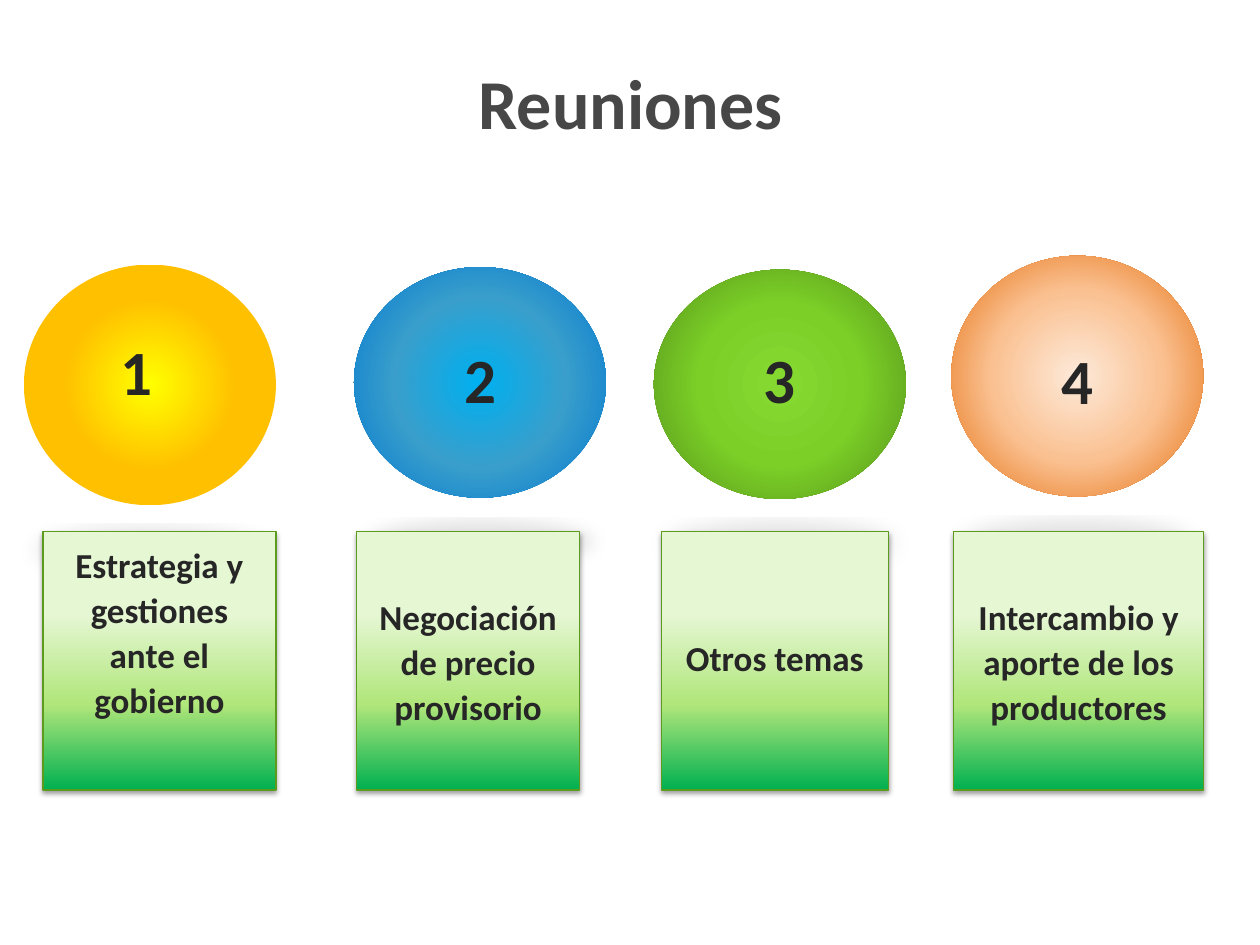
from lxml import etree
from pptx import Presentation
from pptx.dml.color import RGBColor
from pptx.enum.shapes import MSO_SHAPE
from pptx.enum.text import MSO_ANCHOR, PP_ALIGN
from pptx.oxml import parse_xml
from pptx.oxml.ns import nsdecls, qn
from pptx.util import Inches, Pt

OVAL, RECTANGLE = MSO_SHAPE.OVAL, MSO_SHAPE.RECTANGLE
TOP, MIDDLE = MSO_ANCHOR.TOP, MSO_ANCHOR.MIDDLE
LEFT, CENTER = PP_ALIGN.LEFT, PP_ALIGN.CENTER

COLORS = {"title": "474747", "text": "262626", "border": "5C9B1D", "shadow": "000000"}
CARD_STOPS = [(0, "00B050"), (33, "B0E67A"), (68, "E5F7D3")]
UPWARD = '<a:lin ang="16200000" scaled="0"/>'
FROM_CENTER = ('<a:path path="circle"><a:fillToRect l="50000" t="50000" '
               'r="50000" b="50000"/></a:path>')
FLAT_SHADOW = 'sx="90000" sy="-19000" algn="b" rotWithShape="0"'


class MeetingSlide:
    font = "Calibri"

    def __init__(self, deck):
        self.slide = deck.slides.add_slide(deck.slide_layouts[5])
        self.shapes = self.slide.shapes

    def add_text(self, shape, text, size, color, align=CENTER, anchor=TOP):
        frame = shape.text_frame
        frame.word_wrap = True
        frame.vertical_anchor = anchor
        para = frame.paragraphs[0]
        para.alignment = align
        span = para.add_run()
        span.text = text
        span.font.name = self.font
        span.font.size = Pt(size)
        span.font.bold = True
        span.font.color.rgb = RGBColor.from_string(COLORS[color])
        return para, span

    def title(self, text, *place):
        box = self.shapes.title
        box.left, box.top, box.width, box.height = map(Inches, place)
        self.add_text(box, text, 40, "title", anchor=MIDDLE)

    def gradient(self, shape, stops, direction):
        marks = "".join(f'<a:gs pos="{pos * 1000}"><a:srgbClr val="{color}"/></a:gs>'
                        for pos, color in stops)
        fill = parse_xml(f'<a:gradFill {nsdecls("a")} rotWithShape="1">'
                         f'<a:gsLst>{marks}</a:gsLst>{direction}</a:gradFill>')
        shape._element.spPr.find(qn("a:prstGeom")).addnext(fill)

    def shadow(self, shape, opacity, blur, distance, extra='rotWithShape="0"'):
        shape.shadow.inherit = False
        effects = shape._element.spPr.find(qn("a:effectLst"))
        effects.append(etree.fromstring(
            f'<a:outerShdw {nsdecls("a")} blurRad="{Pt(blur)}" dist="{Pt(distance)}" '
            f'dir="5400000" {extra}><a:srgbClr val="{COLORS["shadow"]}">'
            f'<a:alpha val="{opacity * 1000}"/></a:srgbClr></a:outerShdw>'))

    def ball(self, shapes, place, stops, blur):
        oval = shapes.add_shape(OVAL, *map(Inches, place))
        self.gradient(oval, stops, FROM_CENTER)
        oval.line.fill.background()
        self.shadow(oval, 11, blur, 13, FLAT_SHADOW)

    def number(self, shapes, text, left, top, align):
        box = shapes.add_textbox(Inches(left), Inches(top), Inches(0.66), Inches(0.56))
        para, span = self.add_text(box, text, 36, "text", align)
        para.line_spacing = 0.8
        span.font._element.set("spc", "60")

    def card(self, text, left, width, text_offset):
        card = self.shapes.add_shape(RECTANGLE, Inches(left), Inches(4.22),
                                     Inches(width), Inches(2.05))
        self.gradient(card, CARD_STOPS, UPWARD)
        card.line.color.rgb = RGBColor.from_string(COLORS["border"])
        card.line.width = Pt(0.75)
        self.shadow(card, 38, 3.1, 1.6)
        para, _ = self.add_text(card, text, 20, "text")
        card.text_frame.margin_top = Inches(text_offset)
        para.line_spacing = 1.07


# Ball place, gradient, shadow blur; number left, top, alignment
BALLS = [
    ((0.19, 2.1, 2, 1.91), [(0, "FFFF00"), (50, "FFC000"), (100, "FFC000")], 12,
     (0.86, 2.71, LEFT)),
    ((2.81, 2.12, 2, 1.83), [(0, "00B0F0"), (50, "399ECB"), (100, "0077D0")], 10,
     (3.48, 2.77, CENTER)),
    ((5.19, 2.14, 2, 1.82), [(5, "84D830"), (48, "7BCF27"), (100, "56901C")], 12,
     (5.86, 2.77, CENTER)),
    ((7.55, 2.03, 2, 1.91), [(0, "FDEADA"), (50, "FAC090"), (100, "E46C0A")], 12,
     (8.22, 2.78, CENTER)),
]
# Text, left, width, space above the text
CARDS = [
    ("Estrategia y gestiones ante el gobierno", 0.34, 1.85, 0.07),
    ("Negociación de precio provisorio", 2.83, 1.77, 0.48),
    ("Otros temas", 5.25, 1.8, 0.81),
    ("Intercambio y aporte de los productores", 7.57, 1.98, 0.48),
]


def main():
    deck = Presentation()
    deck.slide_width, deck.slide_height = Inches(10), Inches(7.5)
    page = MeetingSlide(deck)
    page.title("Reuniones", 0.67, 0.42, 8.67, 0.77)

    # Numbered balls; the first one is grouped with its number
    for index, (place, stops, blur, label) in enumerate(BALLS, start=1):
        shapes = page.shapes.add_group_shape().shapes if index == 1 else page.shapes
        page.ball(shapes, place, stops, blur)
        page.number(shapes, str(index), *label)

    # Topic cards
    for card in CARDS:
        page.card(*card)

    deck.save("out.pptx")


if __name__ == "__main__":
    main()
